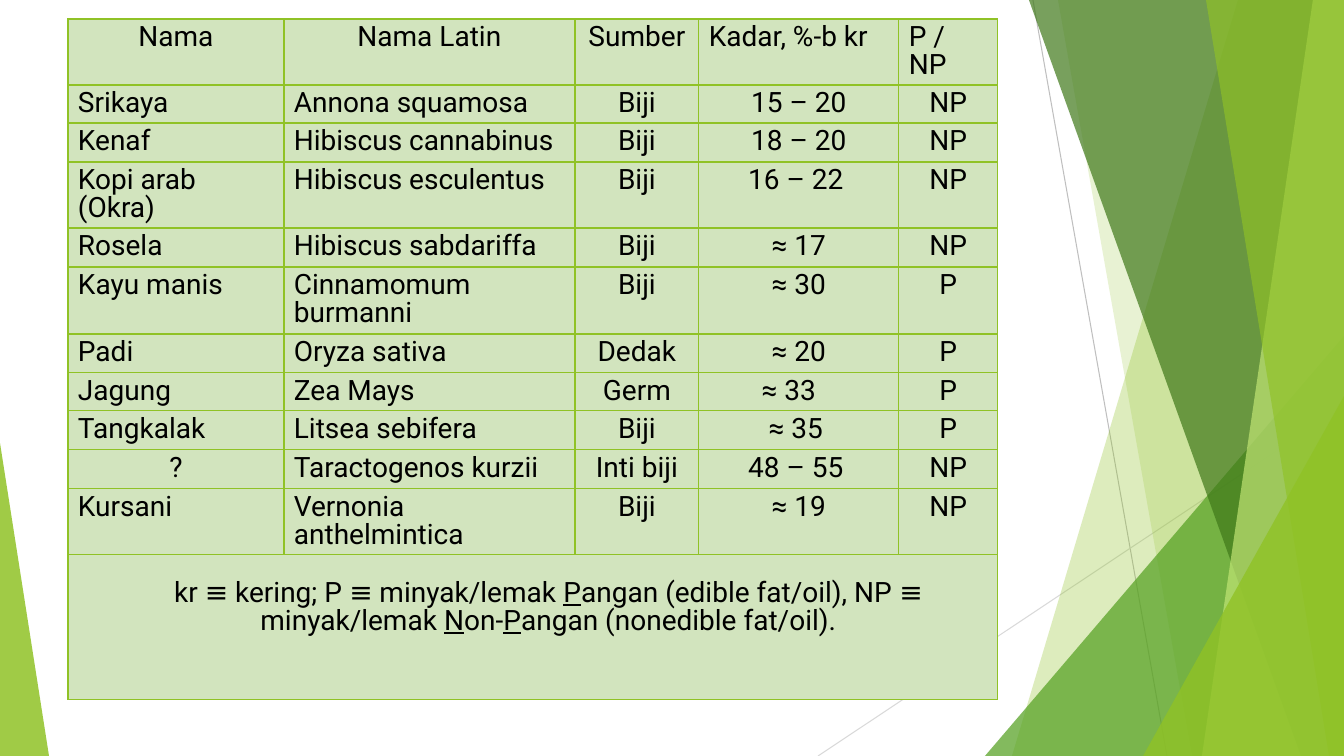
from dataclasses import dataclass

from lxml.etree import SubElement
from pptx import Presentation
from pptx.dml.color import RGBColor
from pptx.enum.shapes import MSO_CONNECTOR, MSO_SHAPE
from pptx.enum.text import PP_ALIGN
from pptx.oxml.ns import qn
from pptx.util import Pt

PX = 914400 / 100.8
WIDTH, HEIGHT = 1344, 756


@dataclass(frozen=True)
class Theme:
    font: str = "Roboto"
    size: int = 20
    text: str = "000000"
    cell: str = "D2E4BE"
    lime: str = "90C226"
    green: str = "54A021"
    dark: str = "3F7819"
    pale: str = "C0E474"
    gray: str = "BFBFBF"
    light_gray: str = "D9D9D9"


T = Theme()

# Content
HEADER = ("Nama", "Nama Latin", "Sumber", "Kadar, %-b kr", "P / NP")
PLANTS = [
    ("Srikaya", "Annona squamosa", "Biji", "15 – 20", "NP"),
    ("Kenaf", "Hibiscus cannabinus", "Biji", "18 – 20", "NP"),
    ("Kopi arab (Okra)", "Hibiscus esculentus", "Biji", "16 – 22", "NP"),
    ("Rosela", "Hibiscus sabdariffa", "Biji", "≈ 17", "NP"),
    ("Kayu manis", "Cinnamomum burmanni", "Biji", "≈ 30", "P"),
    ("Padi", "Oryza sativa", "Dedak", "≈ 20", "P"),
    ("Jagung", "Zea Mays", "Germ", "≈ 33", "P"),
    ("Tangkalak", "Litsea sebifera", "Biji", "≈ 35", "P"),
    ("?", "Taractogenos kurzii", "Inti biji", "48 – 55", "NP"),
    ("Kursani", "Vernonia anthelmintica", "Biji", "≈ 19", "NP"),
]
# Legend runs: text, underlined
LEGEND = [
    ("kr ≡ kering; P ≡ minyak/lemak ", False), ("P", True),
    ("angan (edible fat/oil), NP ≡ minyak/lemak ", False), ("N", True),
    ("on-", False), ("P", True), ("angan (nonedible fat/oil).", False),
]

# Table layout
TABLE_LEFT, TABLE_TOP = 68, 19
COLS = (216, 291, 124, 200, 99)
ROWS = (66, 38, 39, 66, 39, 67, 39, 38, 39, 39, 66, 145)
PAD_X, PAD_Y = 10, 5
LEGEND_TOP, LEGEND_LEFT = 25, 41
EXTRA_RIGHT = {(0, 4): 10, (3, 3): 6, (7, 3): 20, (8, 3): 6, (9, 3): 6}

# Decoration: lines (x1, y1, x2, y2, color)
LINES = [(1033, 0, 1167, 756, T.gray), (1344, 406, 818, 756, T.light_gray)]
# Bands reach the right edge: top x, bottom x, color, opacity %
# Triangles: left, top, width, height, apex, color, opacity %
DECOR = [
    (1238, 1012, T.lime, 30),
    (1058, 1192, T.lime, 20),
    (985, 336, 359, 420, 1, T.green, 72),
    (1029, 1301, T.dark, 70),
    (1313, 1202, T.pale, 70),
    (1206, 1329, T.lime, 65),
    (1143, 396, 201, 360, 1, T.lime, 80),
    (0, 443, 49, 313, 0, T.lime, 85),
]


def px(n):
    return round(n * PX)


def rgb(color):
    return RGBColor.from_string(color)


def add_line(s, x1, y1, x2, y2, color):
    line = s.shapes.add_connector(MSO_CONNECTOR.STRAIGHT, px(x1), px(y1), px(x2), px(y2))
    line.line.color.rgb = rgb(color)
    line.line.width = Pt(0.75)
    SubElement(line._element.spPr, qn("a:effectLst"))


def add_decor(s, *geometry, color, opacity):
    if len(geometry) == 2:
        top_x, bottom_x = geometry
        fb = s.shapes.build_freeform(top_x, 0, scale=PX)
        fb.add_line_segments([(WIDTH, 0), (WIDTH, HEIGHT), (bottom_x, HEIGHT)])
        sp = fb.convert_to_shape()
    else:
        *box, apex = geometry
        sp = s.shapes.add_shape(MSO_SHAPE.ISOSCELES_TRIANGLE, *map(px, box))
        sp.adjustments[0] = apex
    sp.shadow.inherit = False
    sp.line.fill.background()
    sp.fill.solid()
    sp.fill.fore_color.rgb = rgb(color)
    clr = sp._element.spPr.find(qn("a:solidFill"))[0]
    SubElement(clr, qn("a:alpha"), val=str(opacity * 1000))


def style_cell(cell):
    tcPr = cell._tc.get_or_add_tcPr()
    for side in ("lnL", "lnR", "lnT", "lnB"):
        ln = SubElement(tcPr, qn(f"a:{side}"), w=str(Pt(1)))
        SubElement(SubElement(ln, qn("a:solidFill")), qn("a:srgbClr"), val=T.lime)
    cell.fill.solid()
    cell.fill.fore_color.rgb = rgb(T.cell)
    cell.margin_left = cell.margin_right = px(PAD_X)
    cell.margin_top = cell.margin_bottom = px(PAD_Y)


def write(cell, runs, align):
    p = cell.text_frame.paragraphs[0]
    p.alignment = align
    p.line_spacing = 0.85
    for text, underlined in runs:
        r = p.add_run()
        r.text = text
        r.font.name = T.font
        r.font.size = Pt(T.size)
        r.font.bold = False
        r.font.color.rgb = rgb(T.text)
        r.font.underline = underlined


def alignment(row, col, text):
    centered = col < 3 if row == 0 else col >= 2 or text == "?"
    return PP_ALIGN.CENTER if centered else PP_ALIGN.LEFT


def add_plant_table(s):
    frame = s.shapes.add_table(len(ROWS), len(COLS), px(TABLE_LEFT), px(TABLE_TOP),
                               px(sum(COLS)), px(sum(ROWS)))
    table = frame.table
    table.first_row = table.horz_banding = False
    for column, width in zip(table.columns, COLS):
        column.width = px(width)
    for row, height in zip(table.rows, ROWS):
        row.height = px(height)
    for cell in table.iter_cells():
        style_cell(cell)
    for i, values in enumerate([HEADER, *PLANTS]):
        for j, text in enumerate(values):
            cell = table.cell(i, j)
            cell.margin_right = px(PAD_X + EXTRA_RIGHT.get((i, j), 0))
            write(cell, [(text, False)], alignment(i, j, text))

    # Legend across the last row
    last = len(ROWS) - 1
    legend = table.cell(last, 0)
    legend.merge(table.cell(last, len(COLS) - 1))
    legend.margin_top, legend.margin_left = px(LEGEND_TOP), px(LEGEND_LEFT)
    write(legend, LEGEND, PP_ALIGN.CENTER)


def main():
    prs = Presentation()
    prs.slide_width, prs.slide_height = px(WIDTH), px(HEIGHT)
    s = prs.slides.add_slide(prs.slide_layouts[6])
    for line in LINES:
        add_line(s, *line)
    for *geometry, color, opacity in DECOR:
        add_decor(s, *geometry, color=color, opacity=opacity)
    add_plant_table(s)
    prs.save("out.pptx")


if __name__ == "__main__":
    main()
